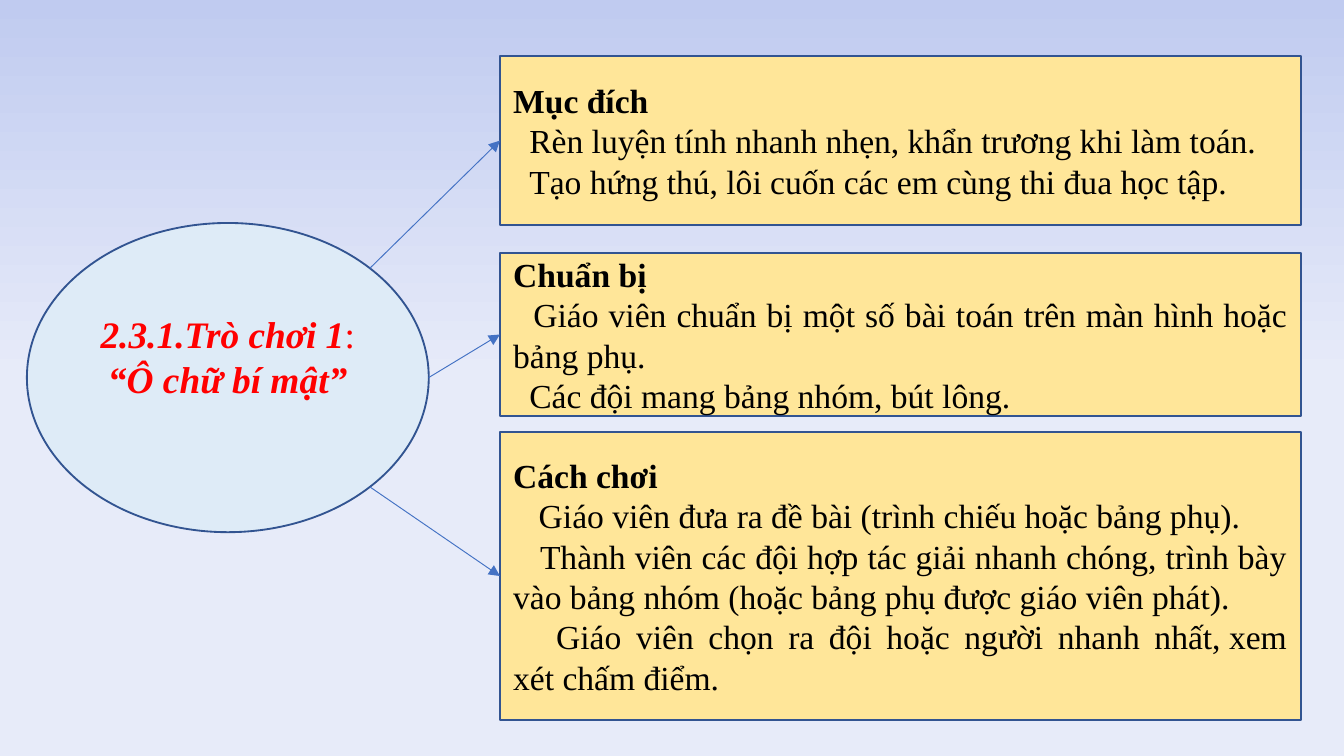
from collections import namedtuple
from math import cos, pi, sin

from lxml.etree import SubElement
from pptx import Presentation
from pptx.dml.color import RGBColor
from pptx.enum.shapes import MSO_CONNECTOR, MSO_SHAPE
from pptx.enum.text import MSO_ANCHOR, PP_ALIGN
from pptx.oxml.ns import qn
from pptx.util import Inches, Pt

Box = namedtuple("Box", "left top width height")

WIDTH = Inches(10)
HEIGHT = WIDTH * 9 // 16
COLUMN, ROW = WIDTH / 100, HEIGHT / 100
FONT = "Times New Roman"
HARD_SPACE = chr(160)
SKY = RGBColor(0xC0, 0xCB, 0xF0)
HAZE = RGBColor(0xE7, 0xEB, 0xF9)
PALE_BLUE = RGBColor(0xDE, 0xEB, 0xF7)
YELLOW = RGBColor(0xFF, 0xE6, 0x99)
NAVY = RGBColor(0x32, 0x54, 0x91)
BLUE = RGBColor(0x44, 0x72, 0xC4)
RED = RGBColor(0xFF, 0x00, 0x00)
BLACK = RGBColor(0x00, 0x00, 0x00)

TOPIC_BOX = Box(2, 29.5, 29.9, 40.9)
TOPIC = [("2.3.1.Trò chơi 1", True), (": ", False), ("“Ô chữ bí mật”", True)]
STEP_LEFT, STEP_WIDTH = 37.2, 59.6
STEPS = [
    (7.4, 22.4, "Mục đích", [
        (0.12, "Rèn luyện tính nhanh nhẹn, khẩn trương khi làm toán."),
        (0.12, "Tạo hứng thú, lôi cuốn các em cùng thi đua học tập."),
    ]),
    (33.5, 21.5, "Chuẩn bị", [
        (0.15, "Giáo viên chuẩn bị một số bài toán trên màn hình hoặc bảng phụ."),
        (0.12, "Các đội mang bảng nhóm, bút lông."),
    ]),
    (57.1, 38.2, "Cách chơi", [
        (0.19, "Giáo viên đưa ra đề bài (trình chiếu hoặc bảng phụ)."),
        (0.2, "Thành viên các đội hợp tác giải nhanh chóng, trình bày vào bảng nhóm "
              "(hoặc bảng phụ được giáo viên phát)."),
        (0.32, "Giáo viên chọn ra đội hoặc người nhanh nhất,"
               f"{HARD_SPACE}xem xét{HARD_SPACE}chấm điểm."),
    ]),
]


def paint_background(page):
    fill = page.background.fill
    fill.gradient()
    fill.gradient_angle = 270
    for stop, color, position in zip(fill.gradient_stops, (SKY, HAZE), (0, 0.5)):
        stop.color.rgb = color
        stop.position = position


def add_panel(page, kind, box, color):
    panel = page.shapes.add_shape(
        kind, round(box.left * COLUMN), round(box.top * ROW),
        round(box.width * COLUMN), round(box.height * ROW))
    panel.shadow.inherit = False
    panel.fill.solid()
    panel.fill.fore_color.rgb = color
    panel.line.color.rgb = NAVY
    panel.line.width = Pt(1)
    panel.text_frame.word_wrap = True
    panel.text_frame.vertical_anchor = MSO_ANCHOR.MIDDLE
    return panel.text_frame


def style_paragraph(para, size, color, align):
    para.alignment = align
    para.font.name = FONT
    para.font.size = Pt(size)
    para.font.color.rgb = color


def add_topic(page, box):
    frame = add_panel(page, MSO_SHAPE.OVAL, box, PALE_BLUE)
    frame.margin_bottom = round(6.6 * ROW)
    para = frame.paragraphs[0]
    style_paragraph(para, 20, RED, PP_ALIGN.CENTER)
    for text, strong in TOPIC:
        span = para.add_run()
        span.text = text
        span.font.bold = span.font.italic = strong


def add_step(page, box, heading, lines):
    frame = add_panel(page, MSO_SHAPE.RECTANGLE, box, YELLOW)
    title = frame.paragraphs[0]
    title.text = heading
    style_paragraph(title, 18, BLACK, PP_ALIGN.JUSTIFY)
    title.font.bold = True
    for indent, text in lines:
        para = frame.add_paragraph()
        para.text = text
        style_paragraph(para, 18, BLACK, PP_ALIGN.JUSTIFY)
        properties = para._p.get_or_add_pPr()
        properties.set("marL", "0")
        properties.set("indent", str(Inches(indent)))


def add_arrow(page, topic, step, angle):
    start_x = topic.left + topic.width / 2 * (1 + cos(angle))
    start_y = topic.top + topic.height / 2 * (1 + sin(angle))
    arrow = page.shapes.add_connector(
        MSO_CONNECTOR.STRAIGHT, round(start_x * COLUMN), round(start_y * ROW),
        round(step.left * COLUMN), round((step.top + step.height / 2) * ROW))
    arrow.line.color.rgb = BLUE
    arrow.line.width = Pt(0.5)
    SubElement(arrow.line._get_or_add_ln(), qn("a:tailEnd"), type="triangle")
    SubElement(arrow._element.spPr, qn("a:effectLst"))


def main():
    deck = Presentation()
    deck.slide_width, deck.slide_height = WIDTH, HEIGHT
    page = deck.slides.add_slide(deck.slide_layouts[6])
    paint_background(page)
    add_topic(page, TOPIC_BOX)
    steps = [(Box(STEP_LEFT, top, STEP_WIDTH, height), heading, lines)
             for top, height, heading, lines in STEPS]
    for box, heading, lines in steps:
        add_step(page, box, heading, lines)
    for number, (box, _, _) in enumerate(steps):
        add_arrow(page, TOPIC_BOX, box, (number - 1) * pi / 4)
    deck.save("out.pptx")


if __name__ == "__main__":
    main()
